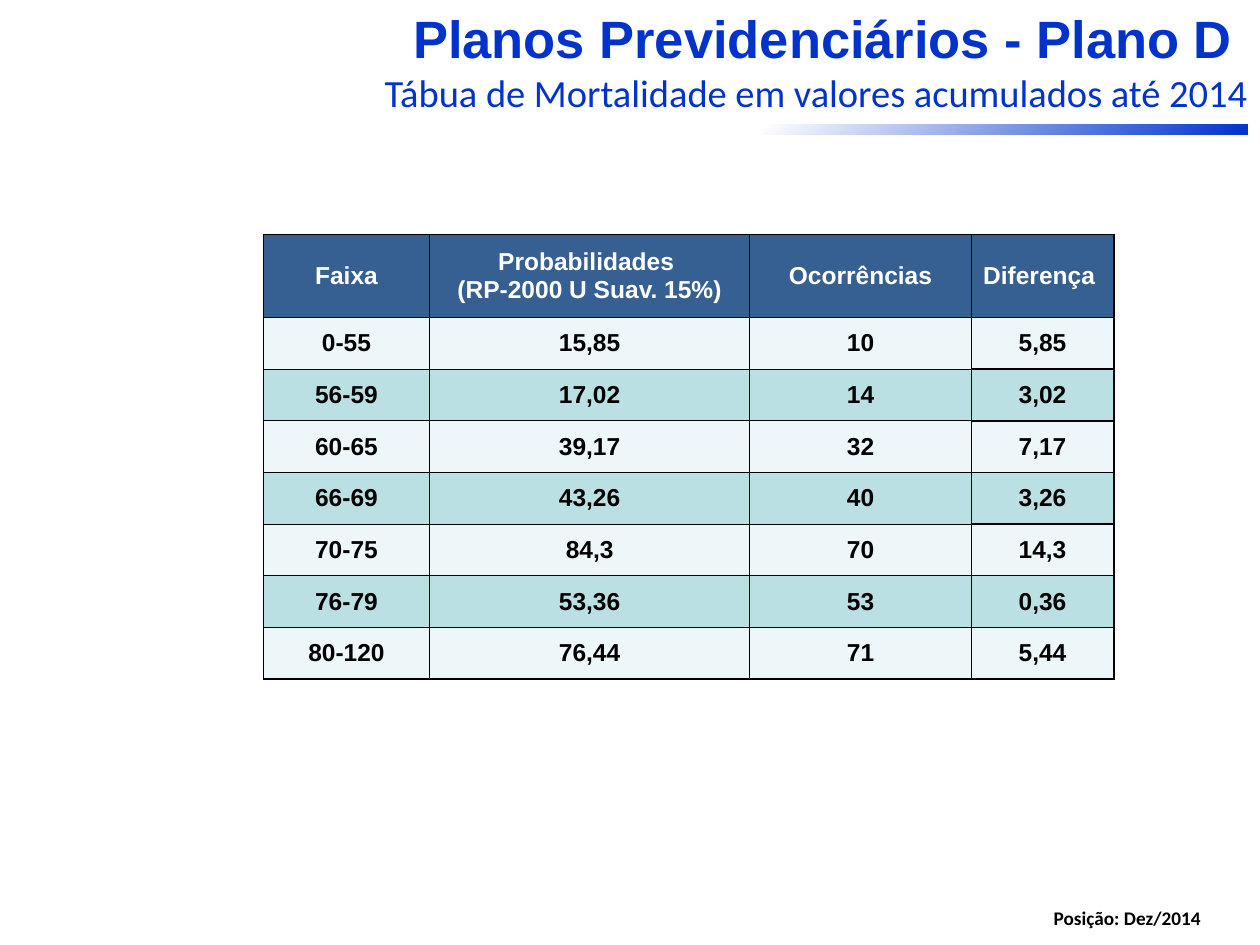
from lxml.etree import SubElement
from pptx import Presentation
from pptx.dml.color import RGBColor
from pptx.enum.shapes import MSO_SHAPE
from pptx.enum.text import MSO_ANCHOR, MSO_AUTO_SIZE, PP_ALIGN
from pptx.oxml.ns import qn
from pptx.util import Inches, Pt

COLORS = {
    "blue": "0033CC",
    "head": "366092",
    "pale": "EDF7F9",
    "teal": "BBE0E3",
    "white": "FFFFFF",
    "black": "000000",
}
WIDTHS = [1.32, 2.54, 1.76, 1.13]
HEAD = ["Faixa", "Probabilidades \n(RP-2000 U Suav. 15%)", "Ocorrências", "Diferença "]
ROWS = [
    ["0-55", "15,85", "10", "5,85"],
    ["56-59", "17,02", "14", "3,02"],
    ["60-65", "39,17", "32", "7,17"],
    ["66-69", "43,26", "40", "3,26"],
    ["70-75", "84,3", "70", "14,3"],
    ["76-79", "53,36", "53", "0,36"],
    ["80-120", "76,44", "71", "5,44"],
]


class Deck:
    def __init__(self):
        self.prs = Presentation()
        self.prs.slide_width = Inches(10)
        self.prs.slide_height = Inches(7.5)
        self.slide = self.prs.slides.add_slide(self.prs.slide_layouts[6])

    def color(self, name):
        return RGBColor.from_string(COLORS[name])

    def style(self, para, size, face, color, bold, align):
        para.alignment = align
        for run in para.runs:
            font = run.font
            font.size = Pt(size)
            font.name = face
            font.bold = bold
            font.color.rgb = self.color(color)

    def bar(self, *box):
        shape = self.slide.shapes.add_shape(MSO_SHAPE.RECTANGLE, *map(Inches, box))
        shape.shadow.inherit = False
        shape.line.fill.background()
        shape.fill.gradient()
        shape.fill.gradient_angle = 315
        for stop, name, place in zip(shape.fill.gradient_stops, ["white", "blue"], [0, 1]):
            stop.color.rgb = self.color(name)
            stop.position = place

    def text(self, box, lines, color, align):
        frame = self.slide.shapes.add_textbox(*map(Inches, box)).text_frame
        frame.word_wrap = True
        frame.auto_size = MSO_AUTO_SIZE.SHAPE_TO_FIT_TEXT
        frame.text = "\n".join(line[0] for line in lines)
        for para, (_, size, face, bold) in zip(frame.paragraphs, lines):
            self.style(para, size, face, color, bold, align)

    def border(self, cell, sides):
        props = cell._tc.get_or_add_tcPr()
        for side, width in sides.items():
            line = SubElement(props, qn(f"a:ln{side}"), w=str(Pt(width)))
            fill = SubElement(line, qn("a:solidFill"))
            SubElement(fill, qn("a:srgbClr"), val=COLORS["black"])

    def cell(self, cell, text, fill, color, sides):
        self.border(cell, sides)
        cell.fill.solid()
        cell.fill.fore_color.rgb = self.color(fill)
        cell.vertical_anchor = MSO_ANCHOR.MIDDLE
        cell.margin_left = cell.margin_right = 0
        cell.margin_top = cell.margin_bottom = 0
        cell.text_frame.text = text
        for para in cell.text_frame.paragraphs:
            self.style(para, 14, "Arial", color, True, PP_ALIGN.CENTER)

    def table(self, box, rows, widths, tall, low):
        frame = self.slide.shapes.add_table(len(rows), len(widths), *map(Inches, box))
        table = frame.table
        for col, width in zip(table.columns, widths):
            col.width = Inches(width)
        end = len(rows) - 1
        for r, row in enumerate(rows):
            table.rows[r].height = Inches(low if r else tall)
            fill = ("pale" if r % 2 else "teal") if r else "head"
            for c, text in enumerate(row):
                last = c == len(widths) - 1
                thick = {
                    "L": r > 0 and c == 2,
                    "R": last or (r > 0 and c == 1),
                    "T": last or r < 2,
                    "B": last or r in (0, end),
                }
                sides = {side: 1 if wide else 0.5 for side, wide in thick.items()}
                self.cell(table.cell(r, c), text, fill, "black" if r else "white", sides)


def main():
    deck = Deck()
    deck.bar(6.06, 0.99, 3.84, 0.08)
    title = [
        ("Planos Previdenciários - Plano D ", 30, "Arial", True),
        ("Tábua de Mortalidade em valores acumulados até 2014", 22, "Calibri", False),
    ]
    deck.text((1.85, 0, 8.15, 0.98), title, "blue", PP_ALIGN.RIGHT)
    note = [(" Posição: Dez/2014", 11, "Calibri", True)]
    deck.text((8.23, 7.14, 1.73, 0.29), note, "black", PP_ALIGN.LEFT)
    deck.table((2.09, 1.86, 6.75, 3.5), [HEAD] + ROWS, WIDTHS, 0.66, 0.41)
    deck.prs.save("out.pptx")


if __name__ == "__main__":
    main()
